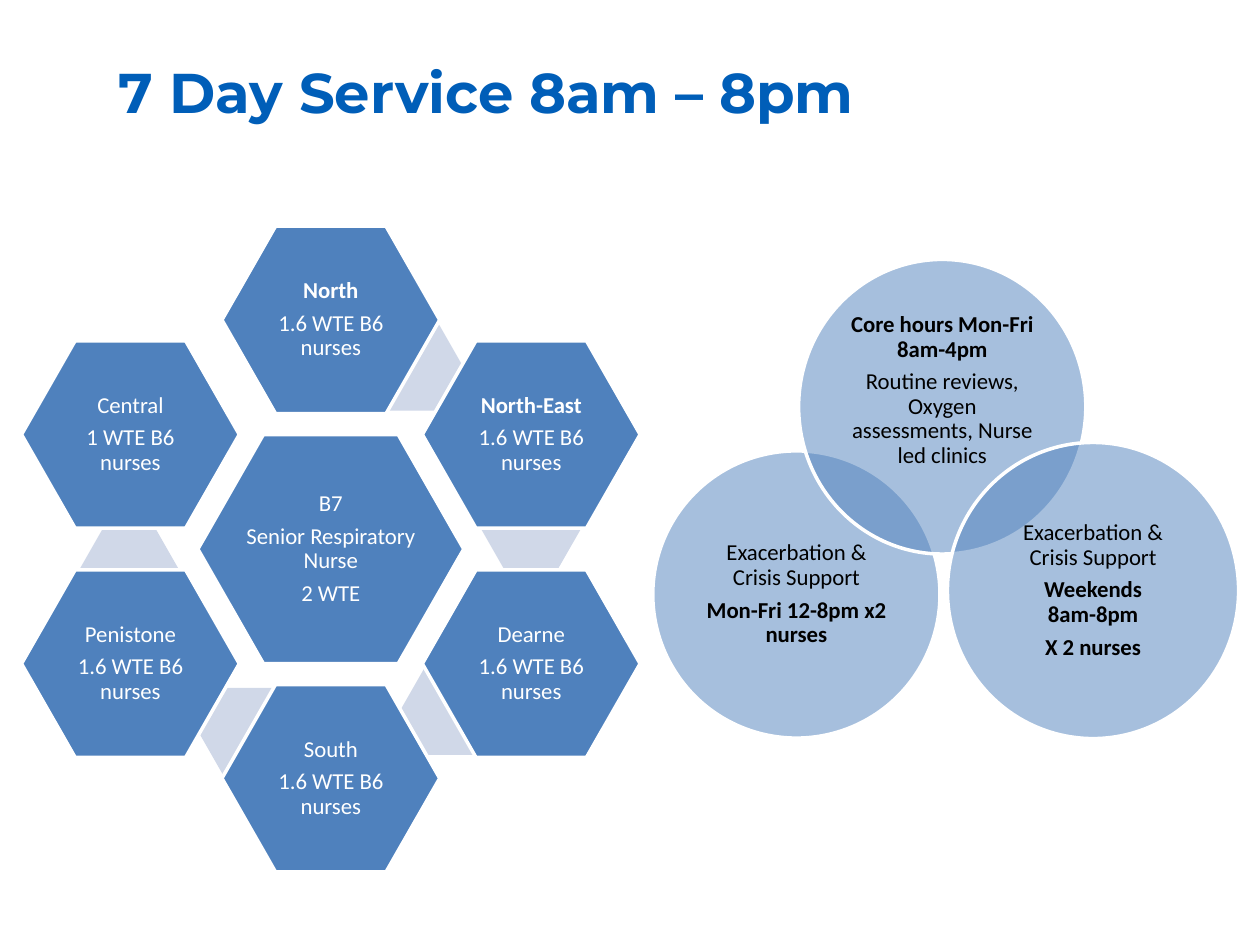
"""Build the seven-day respiratory nursing service slide."""
from dataclasses import dataclass

from lxml import etree
from pptx import Presentation
from pptx.dml.color import RGBColor
from pptx.enum.shapes import MSO_SHAPE
from pptx.enum.text import MSO_ANCHOR, MSO_AUTO_SIZE, PP_ALIGN
from pptx.oxml.ns import qn
from pptx.util import Cm, Pt

HEXAGON, OVAL = MSO_SHAPE.HEXAGON, MSO_SHAPE.OVAL
MIDDLE, CENTER, NO_FIT = MSO_ANCHOR.MIDDLE, PP_ALIGN.CENTER, MSO_AUTO_SIZE.NONE


@dataclass(frozen=True)
class Theme:
    """Colours, fonts and type sizes."""
    title: RGBColor = RGBColor.from_string("005EB8")
    accent: RGBColor = RGBColor.from_string("4F81BD")
    link: RGBColor = RGBColor.from_string("D0D8E8")
    white: RGBColor = RGBColor.from_string("FFFFFF")
    black: RGBColor = RGBColor.from_string("000000")
    title_font: str = "Montserrat"
    body_font: str = "Calibri"
    title_size: Pt = Pt(32)
    body_size: Pt = Pt(13)
    line_width: Pt = Pt(2)


theme = Theme()


def write(frame, text, *, color, bold_lines=(), font=theme.body_font,
          size=theme.body_size, inset=0.05, spacing=0.9, after=4.5):
    """Fill a text frame with one centred paragraph per line of text."""
    frame.word_wrap = True
    frame.auto_size = NO_FIT
    frame.vertical_anchor = MIDDLE
    frame.margin_left = frame.margin_right = Cm(inset)
    frame.margin_top = frame.margin_bottom = Cm(inset)
    frame.text = text
    for index, paragraph in enumerate(frame.paragraphs):
        paragraph.alignment = CENTER
        paragraph.line_spacing = spacing
        paragraph.space_before = Pt(0)
        paragraph.space_after = Pt(after)
        paragraph.font.name = font
        paragraph.font.size = size
        paragraph.font.bold = index in bold_lines
        paragraph.font.color.rgb = color


def add_figure(kind, left, top, width, height, *, fill, outlined=True):
    """Add a flat filled shape, with a white outline if wanted."""
    shape = slide.shapes.add_shape(kind, Cm(left), Cm(top), Cm(width), Cm(height))
    shape.shadow.inherit = False
    shape.fill.solid()
    shape.fill.fore_color.rgb = fill
    if outlined:
        shape.line.color.rgb = theme.white
        shape.line.width = theme.line_width
    else:
        shape.line.fill.background()
    if kind == HEXAGON:
        shape.adjustments[0] = 0.286
    return shape


presentation = Presentation()
presentation.slide_width, presentation.slide_height = Cm(25.4), Cm(19.05)
slide = presentation.slides.add_slide(presentation.slide_layouts[5])

title = slide.shapes.title
title.left, title.top, title.width, title.height = Cm(1.98), Cm(1.02), Cm(16.36), Cm(1.63)
write(title.text_frame, "7 Day Service 8am – 8pm", color=theme.title, bold_lines=(0,),
      font=theme.title_font, size=theme.title_size, spacing=1, after=0)
title.text_frame.margin_right = Cm(0.75)

hub_x, hub_y = 6.67, 11.07
hub_width, hub_height = 5.36, 4.62
hub = add_figure(HEXAGON, hub_x - hub_width / 2, hub_y - hub_height / 2,
                 hub_width, hub_height, fill=theme.accent)
write(hub.text_frame, "B7\nSenior Respiratory Nurse\n2 WTE", color=theme.white)

area_width, area_height = 4.39, 3.78
column_step, row_step = 4.04, 2.31
areas = [
    ("North", "1.6", 0, -2, (0,), (7.34, 6.55)),
    ("North-East", "1.6", 1, -1, (0,), (9.7, 9.8)),
    ("Dearne", "1.6", 1, 1, (), (8.05, 13.49)),
    ("South", "1.6", 0, 2, (), (3.99, 13.87)),
    ("Penistone", "1.6", -1, 1, (), (1.6, 10.62)),
    ("Central", "1", -1, -1, (), None),
]
for name, staff, column, row, bold_lines, link in areas:
    if link:
        add_figure(HEXAGON, *link, 2.01, 1.73, fill=theme.link, outlined=False)
    area = add_figure(HEXAGON, hub_x + column * column_step - area_width / 2,
                      hub_y + row * row_step - area_height / 2,
                      area_width, area_height, fill=theme.accent)
    write(area.text_frame, f"{name}\n{staff} WTE B6 nurses",
          color=theme.white, bold_lines=bold_lines)

shifts = [
    ("Exacerbation & Crisis Support\nMon-Fri 12-8pm x2 nurses", (1,),
     (13.16, 9.09, 5.79, 5.79), 0.15),
    ("Core hours Mon-Fri 8am-4pm\nRoutine reviews, Oxygen assessments, Nurse led clinics", (0,),
     (16.1, 5.23, 5.79, 5.94), 0.8),
    ("Exacerbation & Crisis Support\nWeekends 8am-8pm\nX 2 nurses", (1, 2),
     (19.1, 8.92, 5.87, 5.97), 0.15),
]
for text, bold_lines, box, bottom_inset in shifts:
    circle = add_figure(OVAL, *box, fill=theme.accent)
    color = circle.fill._xPr.find(qn("a:solidFill"))[0]
    etree.SubElement(color, qn("a:alpha"), val="50000")
    write(circle.text_frame, text, color=theme.black, bold_lines=bold_lines, inset=0.15)
    circle.text_frame.margin_bottom = Cm(bottom_inset)

presentation.save("out.pptx")
